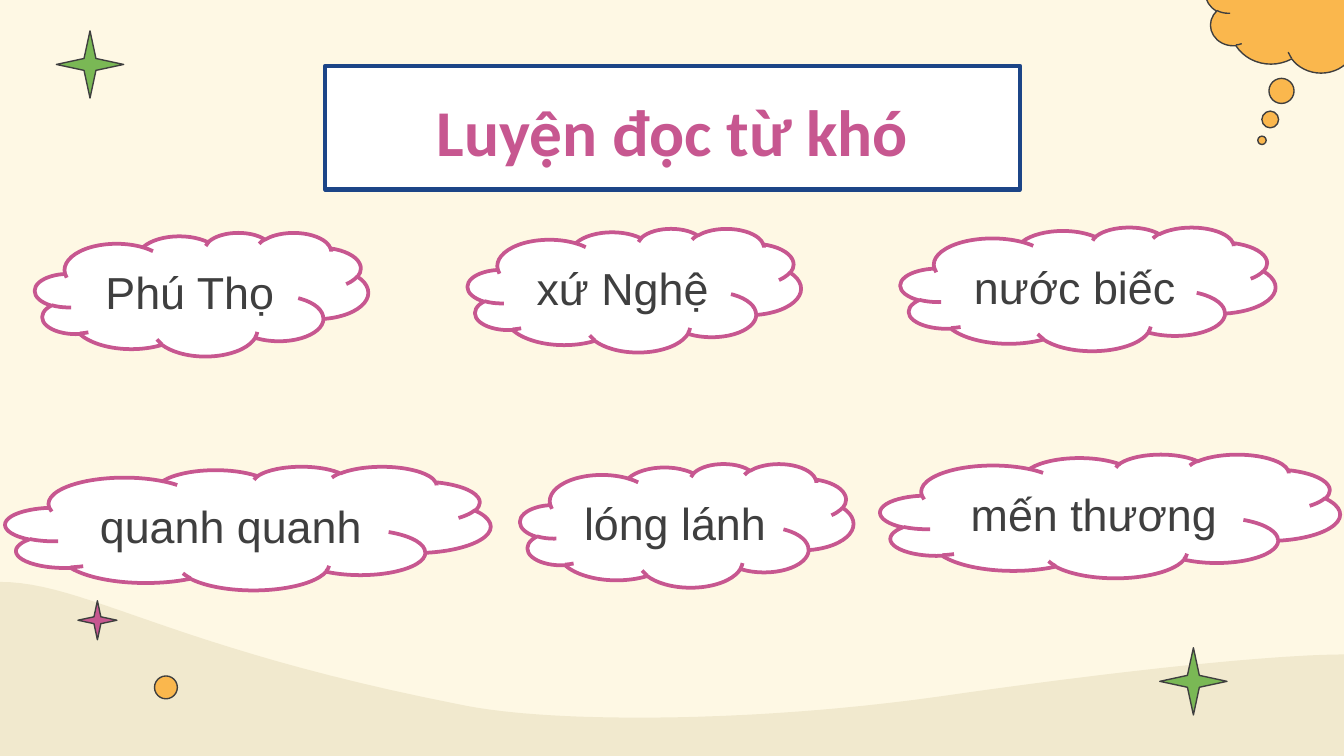
from pptx import Presentation
from pptx.dml.color import RGBColor
from pptx.enum import shapes, text
from pptx.util import Inches, Pt

COLORS = {
    "cream": "FEF8E4",
    "sand": "F1E9CE",
    "orange": "FAB74D",
    "green": "7AB855",
    "pink": "C75790",
    "white": "FFFFFF",
    "blue": "1C4587",
    "dark": "3F3F3F",
}
SHAPE = shapes.MSO_SHAPE
ANCHOR = text.MSO_ANCHOR
SLIDE_WIDTH = Inches(10)
SLIDE_HEIGHT = SLIDE_WIDTH * 9 // 16
CLOUD_HEIGHT = 0.92
CURVE_STEPS = 24

# Each curve: two control points and an end point, in inches.
HILL_START = (10, 4.87)
HILL_CURVES = [
    ((9.56, 4.87), (8.54, 4.96), (7.01, 5.18)),
    ((6.23, 5.29), (5.44, 5.34), (4.76, 5.34)),
    ((4.21, 5.34), (3.74, 5.31), (3.41, 5.24)),
    ((1.27, 4.82), (0.63, 4.33), (0, 4.33)),
]

# Left, top, size, colour.
STARS = [
    (8.63, 4.82, 0.5, "green"),
    (0.58, 4.47, 0.29, "pink"),
    (0.42, 0.23, 0.5, "green"),
]

# Left, top, width, word.
WORD_CLOUDS = [
    (0.26, 1.73, 2.48, "Phú Thọ"),
    (3.48, 1.7, 2.48, "xứ Nghệ"),
    (0.04, 3.47, 3.61, "quanh quanh"),
    (6.7, 1.69, 2.79, "nước biếc"),
    (3.87, 3.45, 2.48, "lóng lánh"),
    (6.55, 3.38, 3.42, "mến thương"),
]


def color(name):
    return RGBColor.from_string(COLORS[name])


def paint(shape, fill, line=None, width=0.75):
    shape.shadow.inherit = False
    shape.fill.solid()
    shape.fill.fore_color.rgb = color(fill)
    if line:
        shape.line.color.rgb = color(line)
        shape.line.width = Pt(width)
    else:
        shape.line.fill.background()


def add_preset(slide, kind, box, fill, line="dark", width=0.75, adjustments=()):
    shape = slide.shapes.add_shape(kind, *map(Inches, box))
    for index, value in enumerate(adjustments):
        shape.adjustments[index] = value
    paint(shape, fill, line, width)
    return shape


def write(shape, words, font, size, ink, bold=False, anchor=ANCHOR.MIDDLE):
    """Put one centred line of text in a shape."""
    frame = shape.text_frame
    frame.text = words
    frame.word_wrap = True
    frame.vertical_anchor = anchor
    paragraph = frame.paragraphs[0]
    paragraph.alignment = text.PP_ALIGN.CENTER
    run_font = paragraph.runs[0].font
    run_font.name = font
    run_font.size = Pt(size)
    run_font.bold = bold
    run_font.color.rgb = color(ink)


def curve_points(start, control_1, control_2, end):
    """Sample a cubic Bezier curve, leaving out its start."""
    for step in range(1, CURVE_STEPS + 1):
        t = step / CURVE_STEPS
        weights = ((1 - t) ** 3, 3 * t * (1 - t) ** 2, 3 * t * t * (1 - t), t ** 3)
        corners = (start, control_1, control_2, end)
        yield tuple(sum(w * c[axis] for w, c in zip(weights, corners)) for axis in (0, 1))


def add_hill(slide):
    points = [(0, 5.64), (10, 5.64), HILL_START]
    for curve in HILL_CURVES:
        points.extend(curve_points(points[-1], *curve))
    corners = [(Inches(x), Inches(y)) for x, y in points]
    builder = slide.shapes.build_freeform(*corners[0])
    builder.add_line_segments(corners[1:], close=True)
    paint(builder.convert_to_shape(), "sand")


def add_title(slide):
    title = slide.shapes.add_textbox(*map(Inches, (2.42, 0.49, 5.17, 0.92)))
    paint(title, "white", "blue", 2.25)
    write(title, "Luyện đọc từ khó", "Calibri", 35, "pink", bold=True, anchor=ANCHOR.TOP)
    frame = title.text_frame
    frame.margin_left = frame.margin_right = Inches(0.1)
    frame.margin_top = frame.margin_bottom = Inches(0.1)
    frame.paragraphs[0].line_spacing = 1.15


def add_word_cloud(slide, left, top, width, word):
    box = (left, top, width, CLOUD_HEIGHT)
    cloud = add_preset(slide, SHAPE.CLOUD, box, "white", "pink", 2)
    write(cloud, word, "Arial", 24, "dark")


def main():
    presentation = Presentation()
    presentation.slide_width = SLIDE_WIDTH
    presentation.slide_height = SLIDE_HEIGHT
    slide = presentation.slides.add_slide(presentation.slide_layouts[6])
    slide.background.fill.solid()
    slide.background.fill.fore_color.rgb = color("cream")

    add_hill(slide)
    add_preset(slide, SHAPE.CLOUD_CALLOUT, (8.97, -0.58, 1.68, 1.12), "orange",
               adjustments=(-0.25, 0.95))
    for left, top, size, fill in STARS:
        add_preset(slide, SHAPE.STAR_4_POINT, (left, top, size, size), fill,
                   adjustments=(0.125,))
    add_preset(slide, SHAPE.OVAL, (1.15, 5.03, 0.17, 0.17), "orange")
    add_title(slide)
    for word_cloud in WORD_CLOUDS:
        add_word_cloud(slide, *word_cloud)
    presentation.save("out.pptx")


if __name__ == "__main__":
    main()
